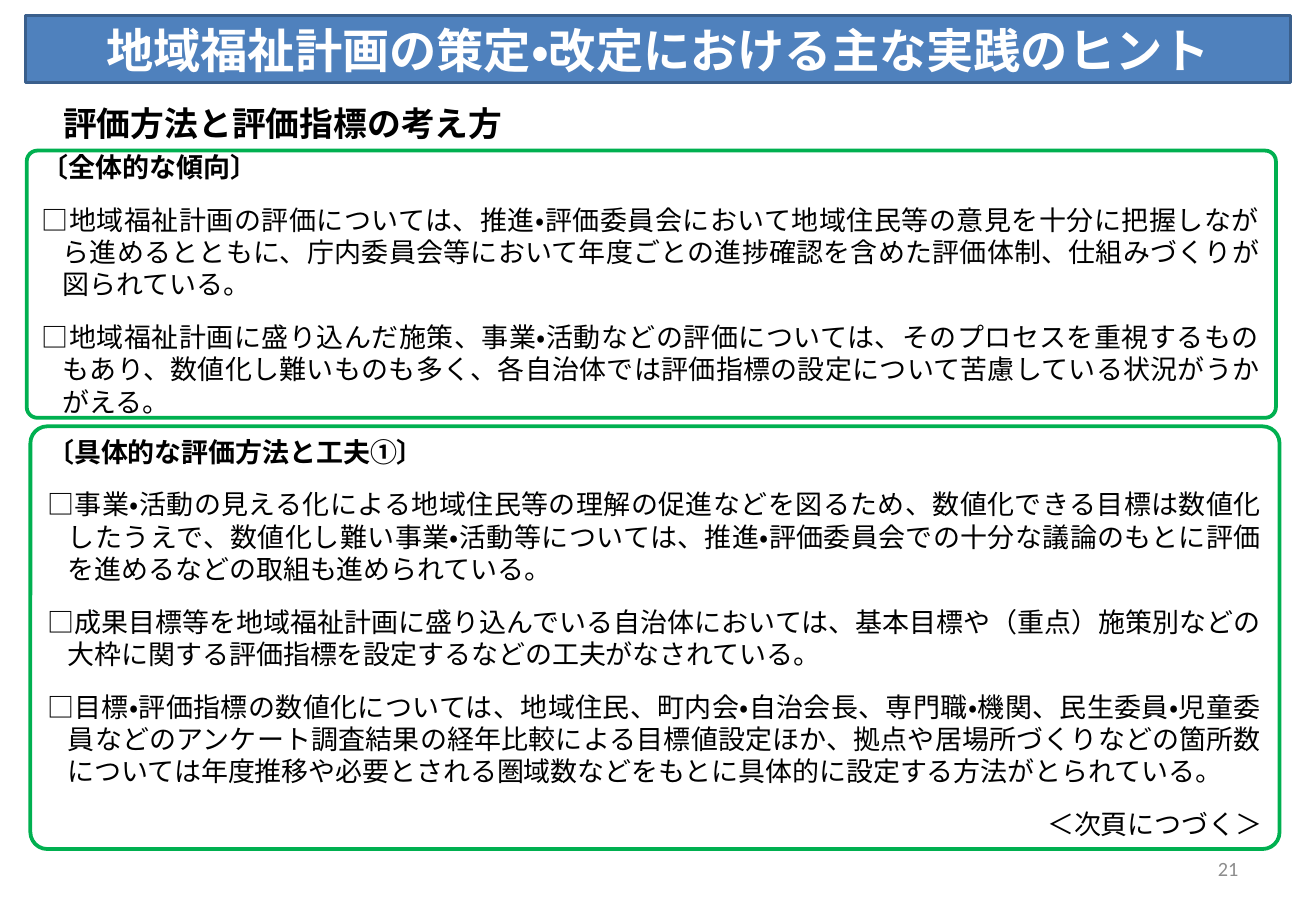
"""Build the slide on evaluating community welfare plans."""
from pptx import Presentation
from pptx.dml.color import RGBColor
from pptx.enum.lang import MSO_LANGUAGE_ID as Lang
from pptx.enum.shapes import MSO_SHAPE as Shape
from pptx.enum.text import MSO_ANCHOR as Anchor, MSO_AUTO_SIZE as Fit, PP_ALIGN as Align
from pptx.util import Inches, Pt

TITLE = "地域福祉計画の策定・改定における主な実践のヒント"
TOPIC = "評価方法と評価指標の考え方"
TREND = [
    "〔全体的な傾向〕",
    "□地域福祉計画の評価については、推進・評価委員会において地域住民等の意見を十分に把握しながら進めるとともに、庁内委員会等において年度ごとの進捗確認を含めた評価体制、仕組みづくりが図られている。",
    "□地域福祉計画に盛り込んだ施策、事業・活動などの評価については、そのプロセスを重視するものもあり、数値化し難いものも多く、各自治体では評価指標の設定について苦慮している状況がうかがえる。",
]
METHODS = [
    "〔具体的な評価方法と工夫①〕",
    "□事業・活動の見える化による地域住民等の理解の促進などを図るため、数値化できる目標は数値化したうえで、数値化し難い事業・活動等については、推進・評価委員会での十分な議論のもとに評価を進めるなどの取組も進められている。",
    "□成果目標等を地域福祉計画に盛り込んでいる自治体においては、基本目標や（重点）施策別などの大枠に関する評価指標を設定するなどの工夫がなされている。",
    "□目標・評価指標の数値化については、地域住民、町内会・自治会長、専門職・機関、民生委員・児童委員などのアンケート調査結果の経年比較による目標値設定ほか、拠点や居場所づくりなどの箇所数については年度推移や必要とされる圏域数などをもとに具体的に設定する方法がとられている。",
]
NEXT = "＜次頁につづく＞"


def color(code):
    """Turn a hex string into a colour."""
    return RGBColor.from_string(code)


def paint(shape, fill, line, width):
    """Set the fill and outline of a shape."""
    shape.fill.solid()
    shape.fill.fore_color.rgb = color(fill)
    shape.line.color.rgb = color(line)
    shape.line.width = Pt(width)


def style(para, size, face, code="000000", bold=False, align=Align.JUSTIFY):
    """Format a paragraph and its runs."""
    para.alignment = align
    for run in para.runs:
        font = run.font
        font.size, font.name, font.bold = Pt(size), face, bold
        font.color.rgb = color(code)
        font.language_id = Lang.JAPANESE


def indent(para, left, first):
    """Set the left margin and first-line indent of a paragraph."""
    props = para._p.get_or_add_pPr()
    props.set("marL", str(Inches(left)))
    props.set("indent", str(Inches(first)))


def add_title(slide):
    """Turn the title placeholder into the blue banner."""
    title = slide.shapes.title
    title.left, title.top = Inches(0.21), Inches(0.13)
    title.width, title.height = Inches(10.41), Inches(0.55)
    paint(title, "4F81BD", "3A5F8C", 2)
    frame = title.text_frame
    frame.text = TITLE
    frame.auto_size = Fit.NONE
    frame.vertical_anchor = Anchor.MIDDLE
    style(frame.paragraphs[0], 28, "Calibri", "FFFFFF", True, Align.CENTER)


def add_label(slide, text, box, anchor=Anchor.TOP):
    """Add a one-line text box and return its paragraph."""
    frame = slide.shapes.add_textbox(*map(Inches, box)).text_frame
    frame.word_wrap = True
    frame.vertical_anchor = anchor
    frame.text = text
    return frame.paragraphs[0]


def add_panel(slide, texts, box):
    """Add a green-edged panel with a bold heading and return its paragraphs."""
    panel = slide.shapes.add_shape(Shape.ROUNDED_RECTANGLE, *map(Inches, box))
    panel.adjustments[0] = 0.04
    panel.shadow.inherit = False
    paint(panel, "FFFFFF", "00B050", 2.25)
    frame = panel.text_frame
    frame.word_wrap = True
    frame.vertical_anchor = Anchor.MIDDLE
    frame.text = "\n".join(texts)
    for i, para in enumerate(frame.paragraphs):
        style(para, 16, "Cambria", bold=i == 0)
        indent(para, 0.17, -0.17)
        para.space_after = Pt(12)
    return frame.paragraphs


def main():
    """Build and save the slide."""
    deck = Presentation()
    deck.slide_width, deck.slide_height = Inches(10.83), Inches(7.5)
    slide = deck.slides.add_slide(deck.slide_layouts[5])
    add_title(slide)
    topic = add_label(slide, TOPIC, (0.25, 0.8, 4.05, 0.44))
    style(topic, 20, "Calibri", bold=True)
    indent(topic, 0, 0.17)
    add_panel(slide, TREND, (0.22, 1.24, 10.28, 2.2))
    paras = add_panel(slide, METHODS + [NEXT], (0.25, 3.51, 10.28, 3.48))
    paras[-1].alignment = Align.RIGHT
    page = add_label(slide, "21", (7.76, 6.95, 2.53, 0.4), Anchor.MIDDLE)
    style(page, 12, "Calibri", "8C8C8C", align=Align.RIGHT)
    deck.save("out.pptx")


if __name__ == "__main__":
    main()
